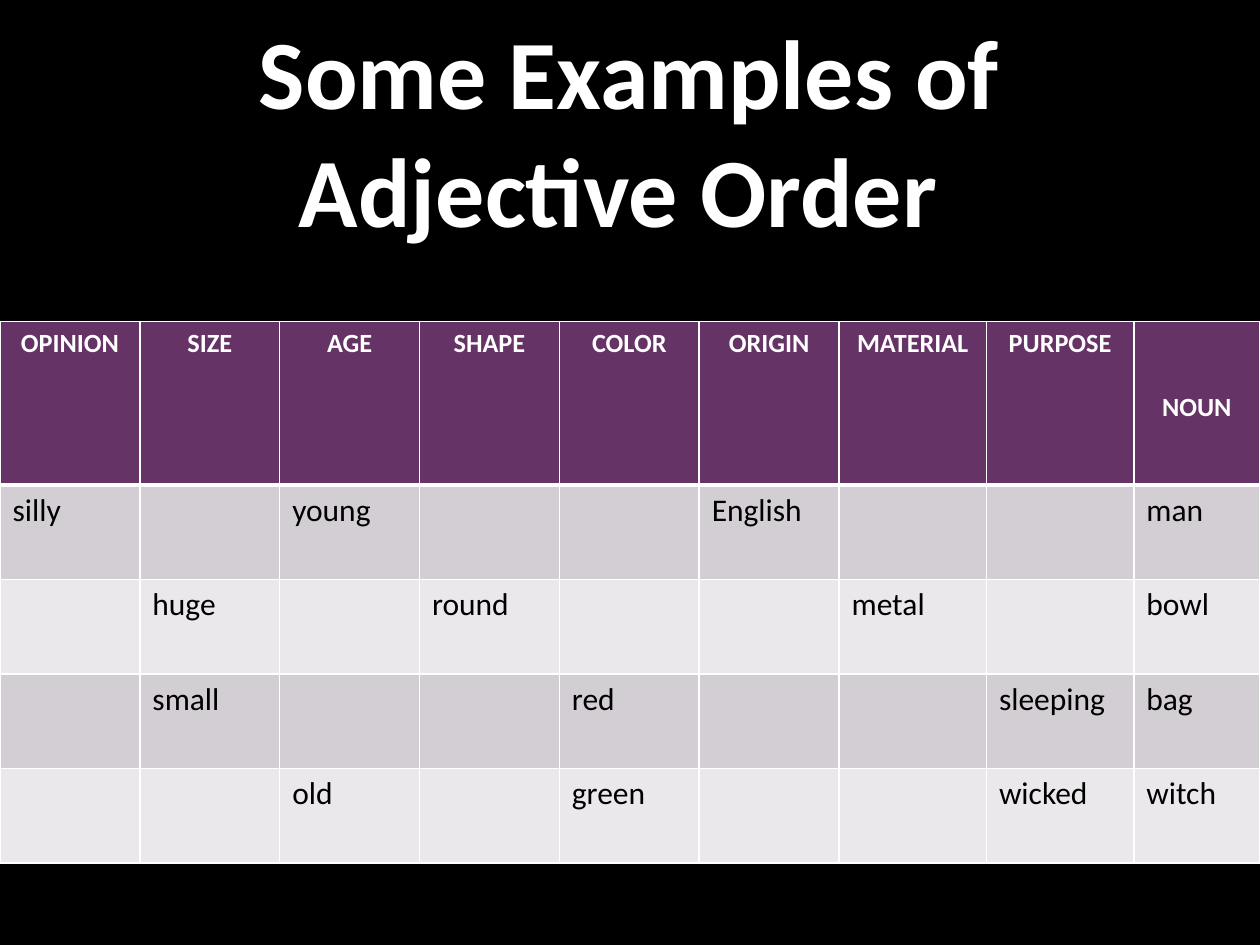
from lxml import etree
from pptx import Presentation
from pptx.dml.color import RGBColor
from pptx.enum import text
from pptx.oxml import ns
from pptx.util import Inches, Pt

BLACK = RGBColor(0x00, 0x00, 0x00)
WHITE = RGBColor(0xFF, 0xFF, 0xFF)
PURPLE = RGBColor(0x66, 0x33, 0x66)
BANDS = [RGBColor(0xD3, 0xCE, 0xD3), RGBColor(0xEA, 0xE8, 0xEA)]

HEADERS = ["OPINION", "SIZE", "AGE", "SHAPE", "COLOR", "ORIGIN", "MATERIAL", "PURPOSE", "NOUN"]
EXAMPLES = [
    {"OPINION": "silly", "AGE": "young", "ORIGIN": "English", "NOUN": "man"},
    {"SIZE": "huge", "SHAPE": "round", "MATERIAL": "metal", "NOUN": "bowl"},
    {"SIZE": "small", "COLOR": "red", "PURPOSE": "sleeping", "NOUN": "bag"},
    {"AGE": "old", "COLOR": "green", "PURPOSE": "wicked", "NOUN": "witch"},
]
COLUMN_WIDTHS = [1.11] * 6 + [1.17] * 2 + [1]
ROW_HEIGHTS = [1.3] + [0.75] * len(EXAMPLES)


def write_text(frame, content, size, color, bold=False, align=text.PP_ALIGN.LEFT):
    paragraph = frame.paragraphs[0]
    paragraph.alignment = align
    run = paragraph.add_run()
    run.text = content
    run.font.name = "Calibri"
    run.font.size = Pt(size)
    run.font.bold = bold
    run.font.color.rgb = color


def add_borders(cell, bottom=1, top=1):
    properties = cell._tc.get_or_add_tcPr()
    for side, width in [("L", 1), ("R", 1), ("T", top), ("B", bottom)]:
        line = etree.SubElement(properties, ns.qn(f"a:ln{side}"), w=str(Pt(width)))
        fill = etree.SubElement(line, ns.qn("a:solidFill"))
        etree.SubElement(fill, ns.qn("a:srgbClr"), val=str(WHITE))


presentation = Presentation()
presentation.slide_width = Inches(10)
presentation.slide_height = Inches(7.5)
slide = presentation.slides.add_slide(presentation.slide_layouts[5])
slide.background.fill.solid()
slide.background.fill.fore_color.rgb = BLACK

title = slide.shapes.title
title.left, title.top = Inches(0.85), Inches(0.12)
title.width, title.height = Inches(8.29), Inches(1.81)
title.text_frame.auto_size = text.MSO_AUTO_SIZE.NONE
title.text_frame.vertical_anchor = text.MSO_ANCHOR.MIDDLE
write_text(title.text_frame, "Some Examples of Adjective Order ", size=56, color=WHITE,
           bold=True, align=text.PP_ALIGN.CENTER)

table = slide.shapes.add_table(
    len(ROW_HEIGHTS), len(HEADERS), Inches(0), Inches(2.55),
    Inches(sum(COLUMN_WIDTHS)), Inches(sum(ROW_HEIGHTS))).table
for column, width in zip(table.columns, COLUMN_WIDTHS):
    column.width = Inches(width)
for row, height in zip(table.rows, ROW_HEIGHTS):
    row.height = Inches(height)

for column_index, header in enumerate(HEADERS):
    cell = table.cell(0, column_index)
    add_borders(cell, bottom=3)
    cell.fill.solid()
    cell.fill.fore_color.rgb = PURPLE
    write_text(cell.text_frame, header, size=15, color=WHITE, bold=True,
               align=text.PP_ALIGN.CENTER)
    for row_index, example in enumerate(EXAMPLES, start=1):
        cell = table.cell(row_index, column_index)
        add_borders(cell, top=3 if row_index == 1 else 1)
        cell.fill.solid()
        cell.fill.fore_color.rgb = BANDS[(row_index - 1) % 2]
        if header in example:
            write_text(cell.text_frame, example[header], size=18, color=BLACK)
table.cell(0, len(HEADERS) - 1).margin_top = Inches(0.56)

presentation.save("out.pptx")
